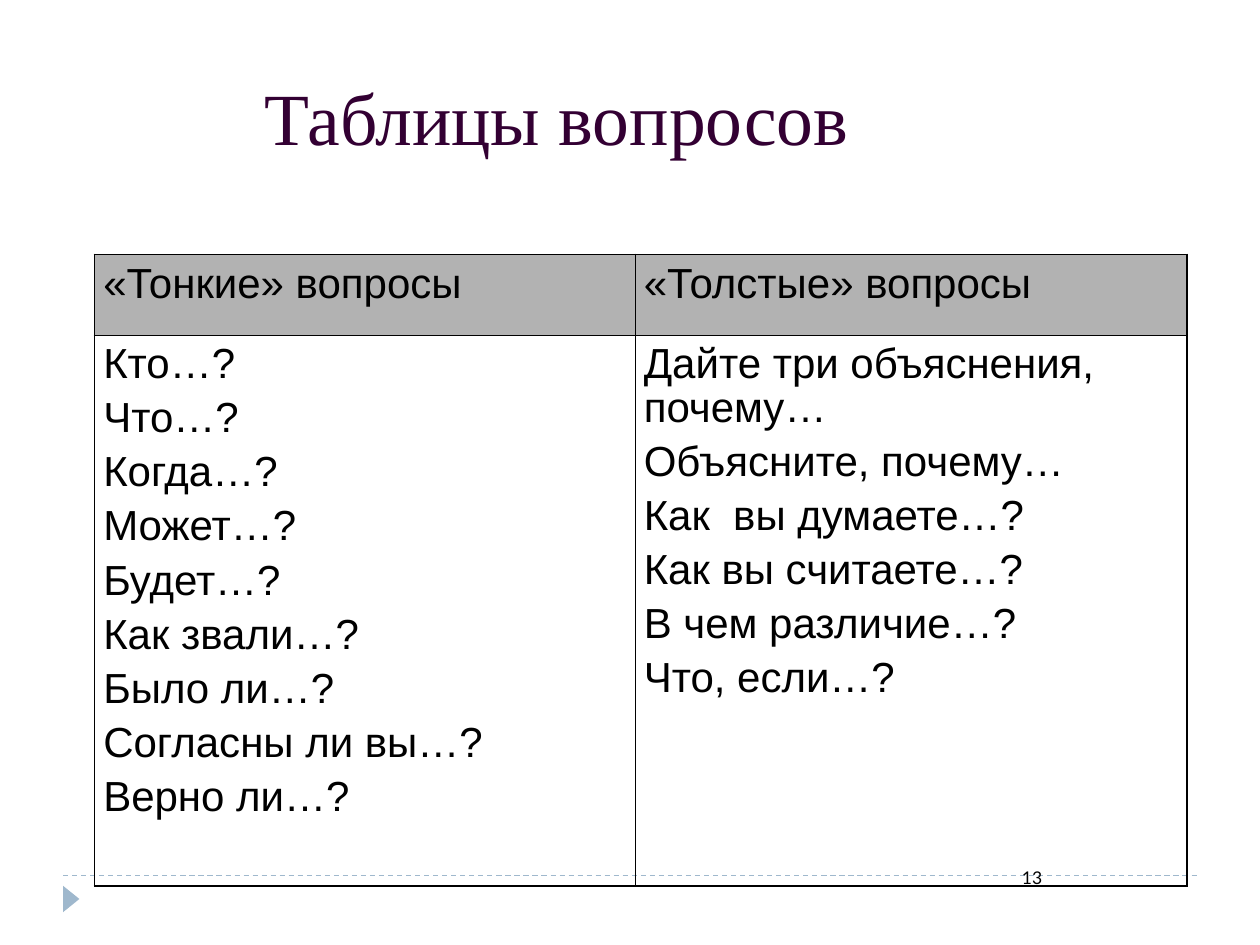
from lxml import etree
from pptx import Presentation
from pptx.dml.color import RGBColor
from pptx.enum.dml import MSO_LINE
from pptx.enum.shapes import MSO_CONNECTOR, MSO_SHAPE
from pptx.enum.text import MSO_ANCHOR, PP_ALIGN
from pptx.oxml.ns import qn
from pptx.util import Inches, Pt

STRAIGHT = MSO_CONNECTOR.STRAIGHT
TRIANGLE = MSO_SHAPE.ISOSCELES_TRIANGLE
DASH = MSO_LINE.DASH
TOP, MIDDLE = MSO_ANCHOR.TOP, MSO_ANCHOR.MIDDLE
LEFT, RIGHT = PP_ALIGN.LEFT, PP_ALIGN.RIGHT

BLACK, PLUM, BLUE, GRAY = "000000", "330033", "9FB8CD", "B2B2B2"
OUTER_BORDER, INNER_BORDER = Pt(1.08), Pt(0.45)

HEADERS = ["«Тонкие» вопросы", "«Толстые» вопросы"]
THIN_QUESTIONS = [
    "Кто…?", "Что…?", "Когда…?", "Может…?", "Будет…?", "Как звали…?",
    "Было ли…?", "Согласны ли вы…?", "Верно ли…?",
]
THICK_QUESTIONS = [
    "Дайте три объяснения, почему…", "Объясните, почему…",
    "Как  вы думаете…?", "Как вы считаете…?", "В чем различие…?",
    "Что, если…?",
]
ROWS = [[[header] for header in HEADERS], [THIN_QUESTIONS, THICK_QUESTIONS]]


def color(value):
    return RGBColor.from_string(value)


def set_font(paragraph, name, size, value):
    paragraph.font.name = name
    paragraph.font.size = Pt(size)
    paragraph.font.color.rgb = color(value)


def add_text(slide, box, text, font, alignment=LEFT, anchor=TOP):
    frame = slide.shapes.add_textbox(*box).text_frame
    frame.word_wrap = True
    frame.vertical_anchor = anchor
    paragraph = frame.paragraphs[0]
    paragraph.text = text
    paragraph.alignment = alignment
    set_font(paragraph, *font)


def add_footer_marks(slide, left, top, width):
    """Draw the dashed rule and the small arrow under its left end."""
    rule = slide.shapes.add_connector(STRAIGHT, left, top, left + width, top)
    rule.line.color.rgb = color(BLUE)
    rule.line.width = Pt(0.75)
    rule.line.dash_style = DASH
    etree.SubElement(rule._element.spPr, qn("a:effectLst"))

    arrow = slide.shapes.add_shape(
        TRIANGLE, left - Inches(0.04), top + Inches(0.12),
        Inches(0.21), Inches(0.13))
    arrow.rotation = 90
    arrow.shadow.inherit = False
    arrow.fill.solid()
    arrow.fill.fore_color.rgb = color(BLUE)
    arrow.line.fill.background()


def set_borders(cell, widths):
    properties = cell._tc.get_or_add_tcPr()
    for side, width in widths.items():
        line = etree.SubElement(properties, qn(f"a:ln{side}"), w=str(width))
        fill = etree.SubElement(line, qn("a:solidFill"))
        etree.SubElement(fill, qn("a:srgbClr"), val=BLACK)


def fill_cell(cell, lines):
    cell.margin_left = cell.margin_right = cell.margin_top = Inches(0.07)
    cell.margin_bottom = Inches(0.05)
    cell.text = "\n".join(lines)
    for paragraph in cell.text_frame.paragraphs:
        paragraph.line_spacing = 0.93
        paragraph.space_before = Pt(6)
        set_font(paragraph, "Arial", 24, BLACK)


def add_question_table(slide, left, top, column_widths, row_heights):
    table = slide.shapes.add_table(
        len(row_heights), len(column_widths), left, top,
        sum(column_widths), sum(row_heights)).table
    table.first_row = table.horz_banding = False
    for column, width in zip(table.columns, column_widths):
        column.width = width
    for row, height in zip(table.rows, row_heights):
        row.height = height

    last_row, last_column = len(row_heights) - 1, len(column_widths) - 1
    for row_index, row in enumerate(ROWS):
        for column_index, lines in enumerate(row):
            cell = table.cell(row_index, column_index)
            fill_cell(cell, lines)
            outer_sides = {
                "L": column_index == 0, "R": column_index == last_column,
                "T": row_index == 0, "B": row_index == last_row,
            }
            set_borders(cell, {
                side: OUTER_BORDER if is_outer else INNER_BORDER
                for side, is_outer in outer_sides.items()})
            if row_index == 0:
                cell.fill.solid()
                cell.fill.fore_color.rgb = color(GRAY)
            else:
                cell.fill.background()


def main():
    presentation = Presentation()
    presentation.slide_width = Inches(10)
    presentation.slide_height = Inches(7.5)
    slide = presentation.slides.add_slide(presentation.slide_layouts[6])

    add_footer_marks(slide, Inches(0.5), Inches(6.95), Inches(9))
    number_box = Inches(6.81), Inches(6.83), Inches(1.56), Inches(0.5)
    add_text(slide, number_box, "13", ("Lato", 10, BLACK), alignment=RIGHT)
    title_box = Inches(2), Inches(0.3), Inches(6.38), Inches(1.25)
    add_text(slide, title_box, "Таблицы вопросов",
             ("Times New Roman", 42, PLUM), anchor=MIDDLE)
    add_question_table(slide, Inches(0.75), Inches(2.02),
                       [Inches(4.29), Inches(4.38)],
                       [Inches(0.64), Inches(4.37)])
    presentation.save("out.pptx")


if __name__ == "__main__":
    main()
